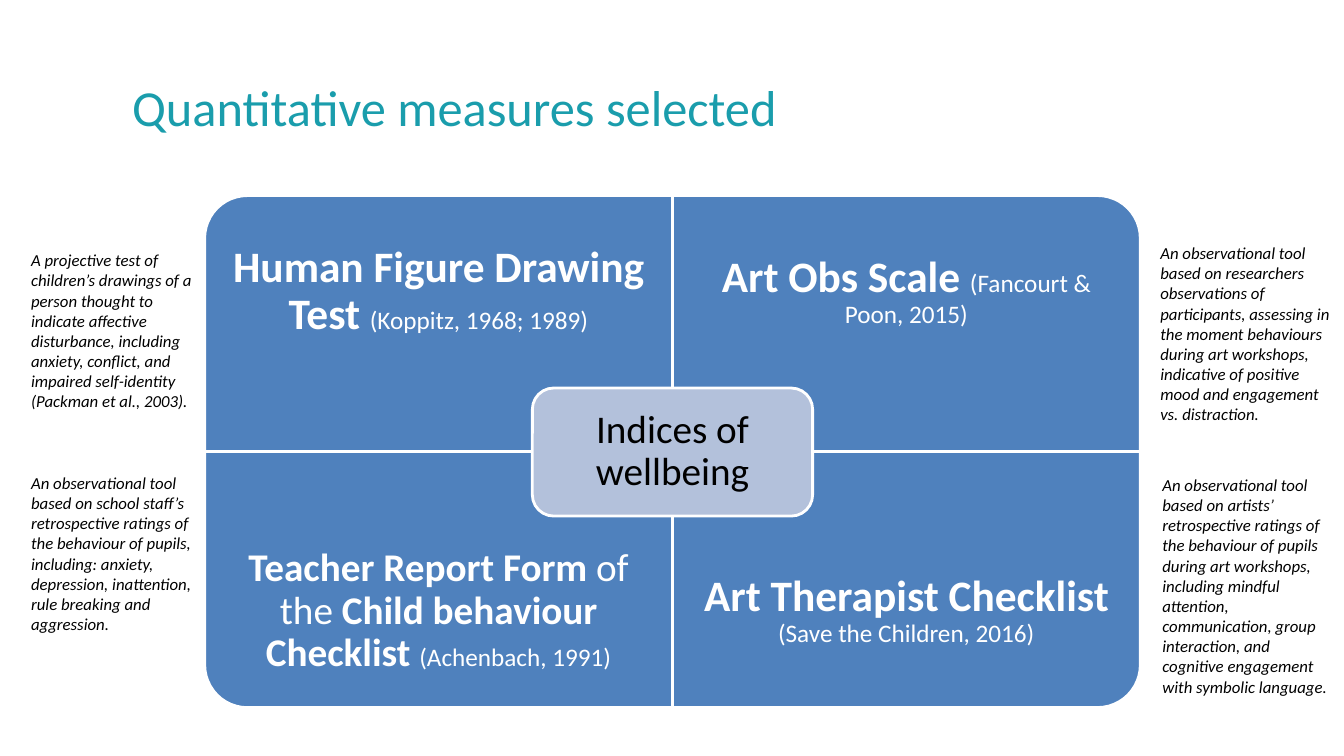
"""Build a slide of four wellbeing measures around a central label."""
from dataclasses import dataclass

from pptx import Presentation
from pptx.dml.color import RGBColor as Rgb
from pptx.enum.shapes import MSO_SHAPE as Kind
from pptx.enum.text import MSO_ANCHOR as Anchor
from pptx.enum.text import MSO_AUTO_SIZE as Fit
from pptx.enum.text import PP_ALIGN as Align
from pptx.slide import Slide
from pptx.text.text import TextFrame
from pptx.util import Emu, Pt

SCALE = 9144
HUE = {"teal": "1A9DAC", "blue": "4F81BD", "pale": "B3C1DB",
       "white": "FFFFFF", "black": "000000"}
LEFT, TOP, WIDE, HIGH = 203, 194, 464, 254
TEXT = 191


@dataclass
class Run:
    text: str
    size: int
    hue: str = "white"
    bold: bool = False
    slant: bool = False


@dataclass
class Tile:
    col: int
    row: int
    turn: int
    pad: int
    runs: list[Run]


@dataclass
class Note:
    x: int
    y: int
    high: int
    text: str


TILES = [
    Tile(0, 0, 270, 24, [Run("Human Figure Drawing Test ", 31, bold=True),
                         Run("(Koppitz, 1968; 1989)", 18)]),
    Tile(1, 0, 0, 24, [Run("Art Obs Scale ", 31, bold=True),
                       Run("(Fancourt & Poon, 2015)", 18)]),
    Tile(0, 1, 180, 22, [Run("Teacher Report Form ", 28, bold=True),
                         Run("of the", 28),
                         Run(" Child behaviour Checklist ", 28, bold=True),
                         Run("(Achenbach, 1991)", 18)]),
    Tile(1, 1, 90, 24, [Run("Art Therapist Checklist ", 31, bold=True),
                        Run("(Save the Children, 2016)", 18)]),
]

NOTES = [
    Note(21, 243, 172,
         "A projective test of children’s drawings of a person thought to "
         "indicate affective disturbance, including anxiety, conflict, and "
         "impaired self-identity (Packman et al., 2003)."),
    Note(21, 464, 172,
         "An observational tool based on school staff’s retrospective ratings "
         "of the behaviour of pupils, including: anxiety, depression, "
         "inattention, rule breaking and aggression."),
    Note(1143, 466, 232,
         "An observational tool based on artists’ retrospective ratings of the "
         "behaviour of pupils during art workshops, including mindful "
         "attention, communication, group interaction, and cognitive "
         "engagement with symbolic language."),
    Note(1141, 236, 192,
         "An observational tool based on researchers observations of "
         "participants, assessing in the moment behaviours during art "
         "workshops, indicative of positive mood and engagement vs. "
         "distraction."),
]


def px(num: float) -> Emu:
    """Turn px into EMU."""
    return Emu(round(num * SCALE))


def add_box(slide: Slide, x: int, y: int, wide: int, high: int,
            runs: list[Run], pad: int | None = None) -> TextFrame:
    """Add a wrapped text box, with equal insets if a pad is given."""
    frame = slide.shapes.add_textbox(px(x), px(y), px(wide), px(high)).text_frame
    frame.word_wrap = True
    if pad is not None:
        frame.margin_left = frame.margin_right = px(pad)
        frame.margin_top = frame.margin_bottom = px(pad)
    for item in runs:
        run = frame.paragraphs[0].add_run()
        run.text = item.text
        font = run.font
        font.name = "Calibri"
        font.size = Pt(item.size)
        font.bold = item.bold
        font.italic = item.slant
        font.color.rgb = Rgb.from_string(HUE[item.hue])
    return frame


def add_label(slide: Slide, x: int, y: int, wide: int, high: int,
              runs: list[Run], pad: int) -> None:
    """Add centred text with tight lines."""
    frame = add_box(slide, x, y, wide, high, runs, pad)
    frame.vertical_anchor = Anchor.MIDDLE
    frame.paragraphs[0].alignment = Align.CENTER
    frame.paragraphs[0].line_spacing = 0.9


def add_panel(slide: Slide, kind: Kind, x: float, y: float, wide: int,
              high: int, hue: str, turn: int = 0) -> None:
    """Add a filled shape with a white outline."""
    shape = slide.shapes.add_shape(kind, px(x), px(y), px(wide), px(high))
    shape.shadow.inherit = False
    shape.rotation = turn
    shape.fill.solid()
    shape.fill.fore_color.rgb = Rgb.from_string(HUE[hue])
    shape.line.color.rgb = Rgb.from_string(HUE["white"])
    shape.line.width = Pt(2)


def add_tile(slide: Slide, tile: Tile) -> None:
    """Add one quarter, its round corner facing outwards."""
    x, y = LEFT + tile.col * WIDE, TOP + tile.row * HIGH
    wide, high = (HIGH, WIDE) if tile.turn % 180 else (WIDE, HIGH)
    add_panel(slide, Kind.ROUND_1_RECTANGLE, x + (WIDE - wide) / 2,
              y + (HIGH - high) / 2, wide, high, "blue", tile.turn)
    add_label(slide, x, y + tile.row * (HIGH - TEXT), WIDE, TEXT,
              tile.runs, tile.pad)


def add_note(slide: Slide, note: Note) -> None:
    """Add one side note."""
    frame = add_box(slide, note.x, note.y, 189, note.high,
                    [Run(note.text, 12, "black", slant=True)])
    frame.auto_size = Fit.SHAPE_TO_FIT_TEXT


def main() -> None:
    """Draw and save the slide."""
    deck = Presentation()
    deck.slide_width, deck.slide_height = px(1333), px(750)
    slide = deck.slides.add_slide(deck.slide_layouts[6])
    add_box(slide, 131, 76, 1150, 102,
            [Run("Quantitative measures selected", 36, "teal")], 0)
    for tile in TILES:
        add_tile(slide, tile)
    add_panel(slide, Kind.ROUNDED_RECTANGLE, 528, 385, 278, 127, "pale")
    add_label(slide, 534, 391, 266, 115,
              [Run("Indices of wellbeing", 28, "black")], 12)
    for note in NOTES:
        add_note(slide, note)
    deck.save("out.pptx")


if __name__ == "__main__":
    main()
